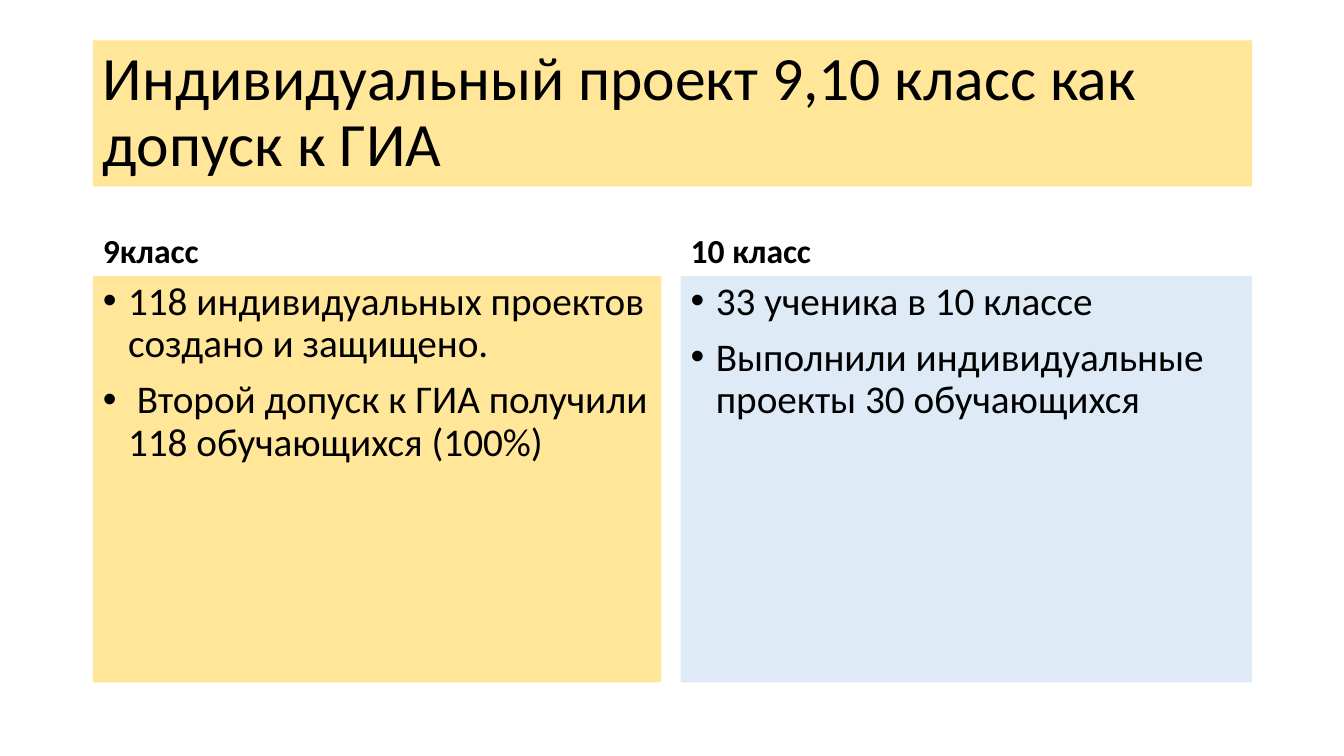
from dataclasses import dataclass

from lxml.etree import SubElement
from pptx import Presentation
from pptx.dml.color import RGBColor
from pptx.enum.text import MSO_ANCHOR, MSO_AUTO_SIZE, PP_ALIGN
from pptx.oxml.ns import qn
from pptx.util import Inches, Pt


@dataclass(frozen=True)
class Theme:
    font: str = "Calibri"
    ink: str = "000000"
    sand: str = "FFE699"
    sky: str = "DEEBF7"
    title_size: int = 44
    heading_size: int = 24
    list_size: int = 28
    line_spacing: float = 0.9
    space_before: int = 10
    indent: float = 0.25


THEME = Theme()
WIDTH, HEIGHT = 13.33, 7.5
COLUMNS = ((0.92, 5.64), (6.75, 5.67))
TITLE_ROW, HEADING_ROW, LIST_ROW = (0.4, 1.45), (1.84, 0.9), (2.74, 4.03)
FULL_WIDTH = (COLUMNS[0][0], sum(COLUMNS[1]) - COLUMNS[0][0])


def place(holder, column, row, anchor, fill=None):
    holder.left, holder.width = (Inches(length) for length in column)
    holder.top, holder.height = (Inches(length) for length in row)
    frame = holder.text_frame
    frame.word_wrap = True
    frame.auto_size = MSO_AUTO_SIZE.NONE
    frame.vertical_anchor = anchor
    if fill:
        holder.fill.solid()
        holder.fill.fore_color.rgb = RGBColor.from_string(fill)
    return frame


def write(paragraph, wording, size, bold=False, before=THEME.space_before):
    paragraph.alignment = PP_ALIGN.LEFT
    paragraph.line_spacing = THEME.line_spacing
    paragraph.space_before = Pt(before)
    run = paragraph.add_run()
    run.text = wording
    run.font.name = THEME.font
    run.font.size = Pt(size)
    run.font.bold = bold
    run.font.color.rgb = RGBColor.from_string(THEME.ink)


def add_bullet(paragraph):
    properties = paragraph._p.get_or_add_pPr()
    properties.set("marL", str(Inches(THEME.indent)))
    properties.set("indent", str(-Inches(THEME.indent)))
    SubElement(properties, qn("a:buFont")).set("typeface", "Arial")
    SubElement(properties, qn("a:buChar")).set("char", "•")


def fill_title(holder, wording):
    frame = place(holder, FULL_WIDTH, TITLE_ROW, MSO_ANCHOR.MIDDLE, THEME.sand)
    write(frame.paragraphs[0], wording, THEME.title_size, before=0)


def fill_heading(holder, column, wording):
    frame = place(holder, column, HEADING_ROW, MSO_ANCHOR.BOTTOM)
    write(frame.paragraphs[0], wording, THEME.heading_size, bold=True)


def fill_list(holder, column, items, fill):
    frame = place(holder, column, LIST_ROW, MSO_ANCHOR.TOP, fill)
    for number, item in enumerate(items):
        paragraph = frame.add_paragraph() if number else frame.paragraphs[0]
        write(paragraph, item, THEME.list_size)
        add_bullet(paragraph)


def main():
    presentation = Presentation()
    presentation.slide_width = Inches(WIDTH)
    presentation.slide_height = Inches(HEIGHT)
    comparison = presentation.slide_layouts.get_by_name("Comparison")
    slide = presentation.slides.add_slide(comparison)
    title, *bodies = slide.placeholders
    fill_title(title, "Индивидуальный проект 9,10 класс как допуск к ГИА")

    grades = (
        ("9класс", THEME.sand, (
            "118 индивидуальных проектов создано и защищено.",
            " Второй допуск к ГИА получили 118 обучающихся (100%)",
        )),
        ("10 класс", THEME.sky, (
            "33 ученика в 10 классе",
            "Выполнили индивидуальные проекты 30 обучающихся",
        )),
    )
    pairs = zip(COLUMNS, grades, bodies[::2], bodies[1::2])
    for column, (grade, fill, results), heading, listing in pairs:
        fill_heading(heading, column, grade)
        fill_list(listing, column, results, fill)

    presentation.save("out.pptx")


if __name__ == "__main__":
    main()
